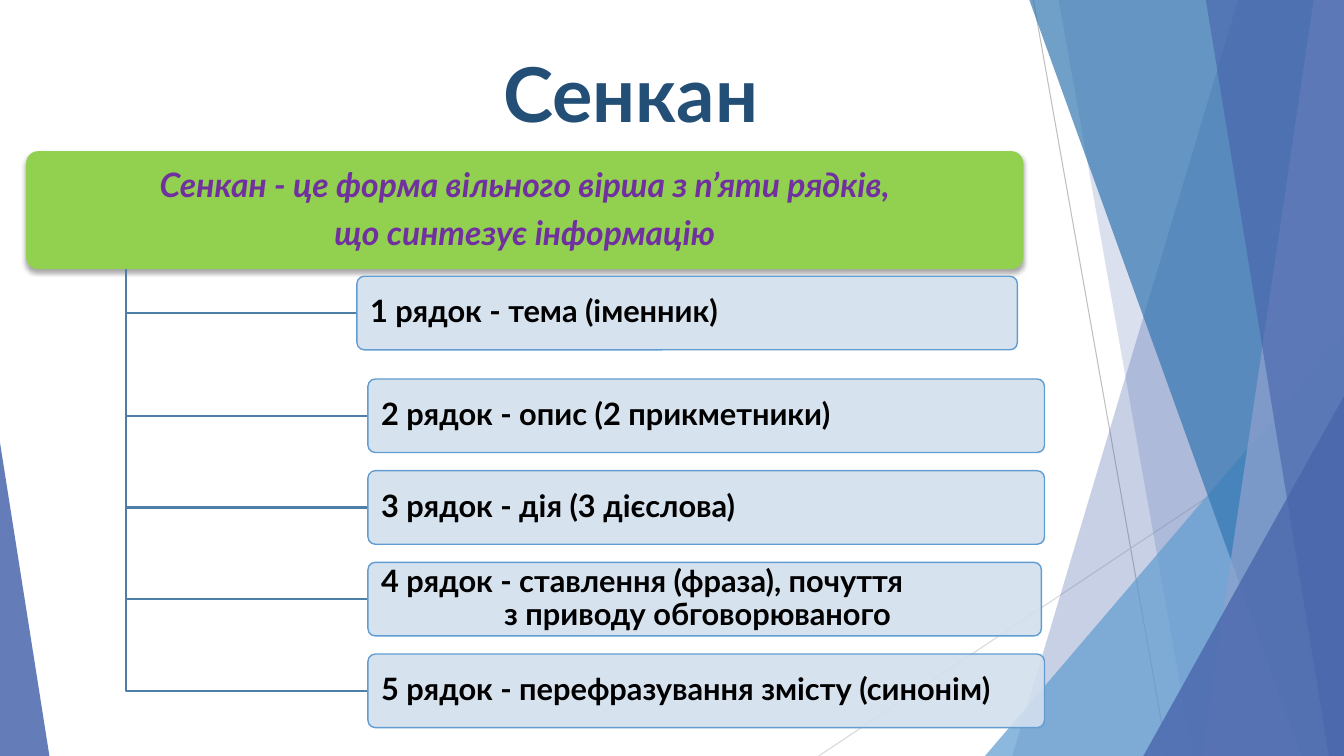
from dataclasses import dataclass

import lxml.etree
import pptx
import pptx.dml.color
import pptx.enum.shapes
import pptx.enum.text
import pptx.oxml.ns
import pptx.shapes.autoshape
import pptx.slide
import pptx.text.text
import pptx.util

SLIDE_WIDTH = pptx.util.Inches(13.33)
SLIDE_HEIGHT = pptx.util.Inches(7.5)
FONT = "Lato"
NAVY, SKY = "4A66AC", "629DD1"
STEM_X, BANNER_BOTTOM = 9.37, 35.6
SECOND_TOP, STEP, ITEM_HEIGHT = 50.13, 12.13, 9.73


@dataclass
class Box:
    left: float
    top: float
    width: float
    height: float


@dataclass
class Ray:
    start: tuple[float, float]
    end: tuple[float, float]
    color: str


@dataclass
class Facet:
    top_x: float
    bottom_x: float
    color: str
    opacity: int


@dataclass
class Corner:
    box: Box
    apex: float
    color: str
    opacity: int


@dataclass
class VerseLine:
    row: float
    lines: list[str]
    left: float = 27.38
    width: float = 50.34


RAYS = [
    Ray((76.89, 0), (86.87, 100), "BFBFBF"),
    Ray((100, 53.73), (60.92, 100), "D9D9D9"),
]
BACKDROP = [
    Facet(92.12, 75.32, NAVY, 30),
    Facet(78.77, 88.75, NAVY, 20),
    Corner(Box(73.29, 44.4, 26.71, 55.6), 1, SKY, 72),
    Facet(76.59, 96.85, "3477B2", 70),
    Facet(97.75, 89.42, "90A2CF", 70),
    Facet(89.72, 98.87, NAVY, 65),
    Corner(Box(85.07, 52.4, 14.93, 47.6), 1, NAVY, 80),
    Corner(Box(0, 58.53, 3.68, 41.47), 0, NAVY, 85),
]
DEFINITION = ["Сенкан - це форма вільного вірша з п’яти рядків,", "що синтезує інформацію"]
VERSE = [
    VerseLine(-1.12, ["1 рядок - тема (іменник)"], 26.56, 49.14),
    VerseLine(0, ["2 рядок - опис (2 прикметники)"]),
    VerseLine(1, ["3 рядок - дія (3 дієслова)"]),
    VerseLine(2, ["4 рядок - ставлення (фраза), почуття", "з приводу обговорюваного"], width=50.11),
    VerseLine(3, ["5 рядок - перефразування змісту (синонім)"]),
]


def across(share: float) -> int:
    return round(SLIDE_WIDTH * share / 100)


def down(share: float) -> int:
    return round(SLIDE_HEIGHT * share / 100)


def rgb(color: str) -> pptx.dml.color.RGBColor:
    return pptx.dml.color.RGBColor.from_string(color)


def place(box: Box) -> tuple[int, int, int, int]:
    return across(box.left), down(box.top), across(box.width), down(box.height)


def add_node(parent, tag: str, **attributes: str):
    node = lxml.etree.SubElement(parent, pptx.oxml.ns.qn(tag))
    node.attrib.update(attributes)
    return node


def paint(shape: pptx.shapes.autoshape.Shape, color: str, opacity: int = 100) -> None:
    shape.shadow.inherit = False
    shape.line.fill.background()
    shape.fill.solid()
    shape.fill.fore_color.rgb = rgb(color)
    if opacity < 100:
        swatch = shape._element.spPr.find(".//" + pptx.oxml.ns.qn("a:srgbClr"))
        add_node(swatch, "a:alpha", val=str(opacity * 1000))


def add_outline(slide: pptx.slide.Slide, points: list, close: bool) -> pptx.shapes.autoshape.Shape:
    corners = [(across(x), down(y)) for x, y in points]
    builder = slide.shapes.build_freeform(*corners[0], scale=1.0)
    builder.add_line_segments(corners[1:], close=close)
    return builder.convert_to_shape()


def add_ray(slide: pptx.slide.Slide, ray: Ray) -> None:
    line = slide.shapes.add_connector(
        pptx.enum.shapes.MSO_CONNECTOR.STRAIGHT,
        across(ray.start[0]), down(ray.start[1]), across(ray.end[0]), down(ray.end[1]),
    )
    line.line.color.rgb = rgb(ray.color)
    line.line.width = pptx.util.Pt(0.75)
    add_node(line._element.spPr, "a:effectLst")


def add_backdrop(slide: pptx.slide.Slide, part: Facet | Corner) -> None:
    if isinstance(part, Facet):
        edges = [(part.top_x, 0), (100, 0), (100, 100), (part.bottom_x, 100)]
        shape = add_outline(slide, edges, True)
    else:
        shape = slide.shapes.add_shape(
            pptx.enum.shapes.MSO_SHAPE.ISOSCELES_TRIANGLE, *place(part.box))
        shape.adjustments[0] = part.apex
    paint(shape, part.color, part.opacity)


def style(paragraph: pptx.text.text._Paragraph, size: float, color: str, italic: bool = False) -> None:
    for run in paragraph.runs:
        run.font.name = FONT
        run.font.size = pptx.util.Pt(size)
        run.font.bold = True
        run.font.italic = italic
        run.font.color.rgb = rgb(color)


def add_panel(slide: pptx.slide.Slide, box: Box, lines: list[str], color: str,
              opacity: int = 100) -> pptx.shapes.autoshape.Shape:
    panel = slide.shapes.add_shape(pptx.enum.shapes.MSO_SHAPE.ROUNDED_RECTANGLE, *place(box))
    panel.adjustments[0] = 0.1
    paint(panel, color, opacity)
    frame = panel.text_frame
    frame.word_wrap = True
    frame.vertical_anchor = pptx.enum.text.MSO_ANCHOR.MIDDLE
    frame.margin_left = frame.margin_right = pptx.util.Inches(0.05)
    frame.margin_top = frame.margin_bottom = pptx.util.Inches(0.03)
    frame.text = "\n".join(lines)
    for paragraph in frame.paragraphs:
        paragraph.line_spacing = 0.9
    return panel


def add_title(slide: pptx.slide.Slide) -> None:
    title = slide.shapes.title
    title.left, title.top, title.width, title.height = place(Box(36.68, 5.6, 32.48, 13.47))
    frame = title.text_frame
    frame.text = "Сенкан"
    frame.auto_size = pptx.enum.text.MSO_AUTO_SIZE.NONE
    frame.vertical_anchor = pptx.enum.text.MSO_ANCHOR.TOP
    heading = frame.paragraphs[0]
    heading.alignment = pptx.enum.text.PP_ALIGN.LEFT
    heading.line_spacing = 1.0
    style(heading, 54, "234F77")
    properties = heading.runs[0]._r.get_or_add_rPr()
    contour = add_node(properties, "a:ln", w=str(pptx.util.Pt(0.15)))
    add_node(add_node(contour, "a:solidFill"), "a:srgbClr", val="069FBE")
    properties.insert(0, contour)


def add_definition(slide: pptx.slide.Slide) -> None:
    banner = add_panel(slide, Box(1.95, 20, 74.19, 15.6), DEFINITION, "92D050")
    for paragraph in banner.text_frame.paragraphs:
        paragraph.alignment = pptx.enum.text.PP_ALIGN.CENTER
        paragraph.space_after = pptx.util.Pt(8.4)
        style(paragraph, 24, "7030A0", italic=True)
    effects = banner._element.spPr.find(pptx.oxml.ns.qn("a:effectLst"))
    shade = add_node(effects, "a:outerShdw", blurRad=str(pptx.util.Pt(3)),
                     dist=str(pptx.util.Pt(2)), dir="5400000", rotWithShape="0")
    add_node(add_node(shade, "a:srgbClr", val="000000"), "a:alpha", val="35000")


def add_verse_line(slide: pptx.slide.Slide, verse: VerseLine) -> None:
    top = SECOND_TOP + STEP * verse.row
    middle = top + ITEM_HEIGHT / 2
    branch = add_outline(
        slide, [(STEM_X, BANNER_BOTTOM), (STEM_X, middle), (verse.left, middle)], False)
    branch.shadow.inherit = False
    branch.fill.background()
    branch.line.color.rgb = rgb("4E7EA7")
    branch.line.width = pptx.util.Pt(1.5)

    panel = add_panel(slide, Box(verse.left, top, verse.width, ITEM_HEIGHT), verse.lines, "D3DFEE", 90)
    panel.line.color.rgb = rgb(SKY)
    panel.line.width = pptx.util.Pt(1)
    panel.text_frame.margin_left = pptx.util.Inches(0.11)
    for index, paragraph in enumerate(panel.text_frame.paragraphs):
        paragraph.alignment = pptx.enum.text.PP_ALIGN.LEFT
        style(paragraph, 22, "000000")
        if index:
            paragraph._p.get_or_add_pPr().set("marL", str(pptx.util.Inches(1.22)))


def main() -> None:
    deck = pptx.Presentation()
    deck.slide_width, deck.slide_height = SLIDE_WIDTH, SLIDE_HEIGHT
    slide = deck.slides.add_slide(deck.slide_layouts.get_by_name("Title Only"))
    for ray in RAYS:
        add_ray(slide, ray)
    for part in BACKDROP:
        add_backdrop(slide, part)
    add_title(slide)
    add_definition(slide)
    for verse in VERSE:
        add_verse_line(slide, verse)
    deck.save("out.pptx")


if __name__ == "__main__":
    main()
